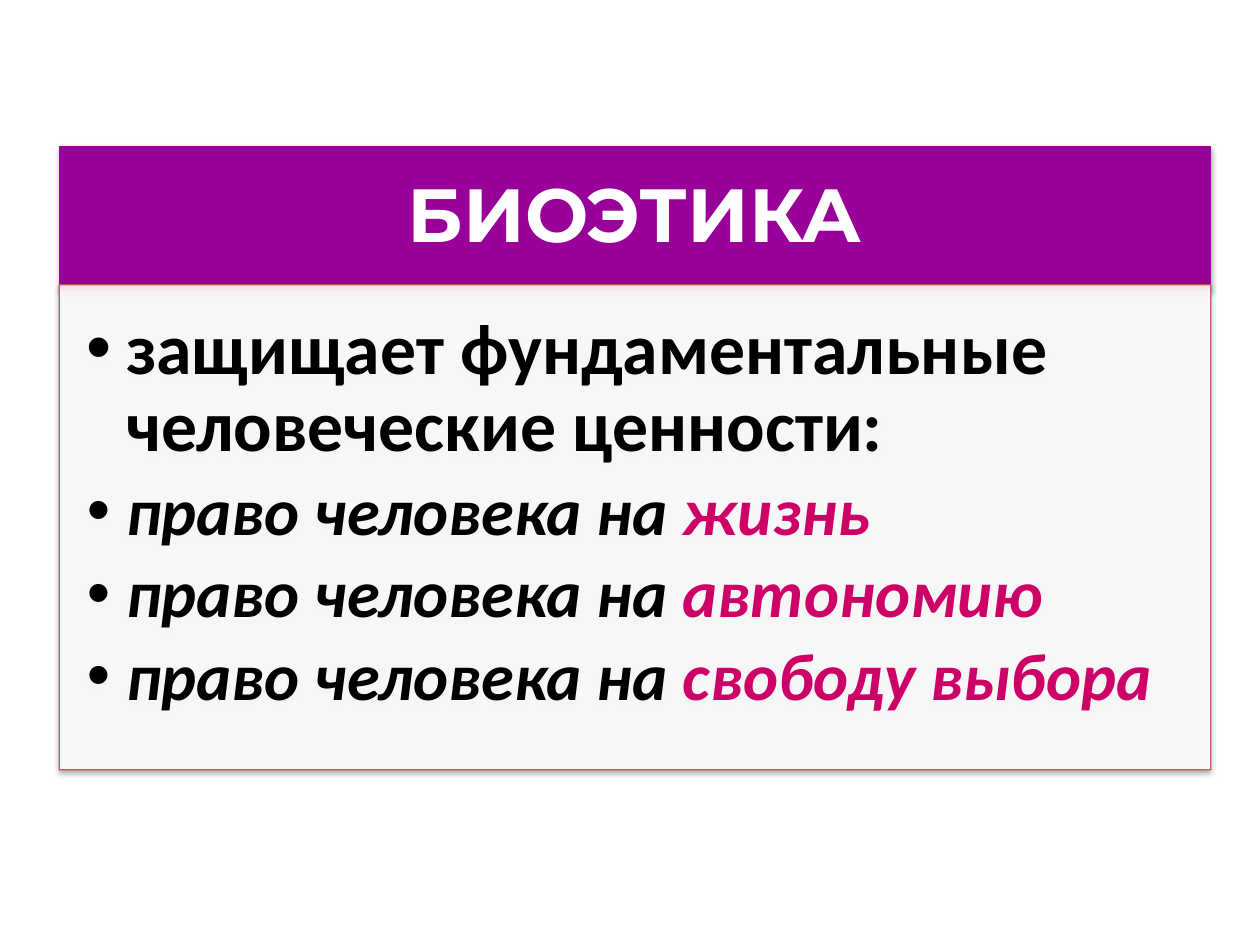
import pptx
import pptx.dml.color
import pptx.enum.text
import pptx.oxml
import pptx.oxml.ns
import pptx.util
from pptx.util import Inches

COLORS = {
    "banner": "990099",
    "panel": "FFFFFF",
    "border": "C0504D",
    "banner_text": "FFFFFF",
    "text": "000000",
    "accent": "CC0066",
}
OPACITY = 90
RIGHT_PREFIX = "право человека на "
RIGHTS = ["жизнь", "автономию", "свободу выбора"]


def rgb(name):
    return pptx.dml.color.RGBColor.from_string(COLORS[name])


def apply_format(target, values):
    for name, value in values.items():
        setattr(target, name, value)


def add_shadow(shape):
    """Append a soft downward shadow; call it after fill and line are set."""
    shape._element.spPr.append(pptx.oxml.parse_xml(
        f'<a:effectLst {pptx.oxml.ns.nsdecls("a")}>'
        '<a:outerShdw blurRad="40000" dist="23000" dir="5400000" rotWithShape="0">'
        '<a:srgbClr val="000000"><a:alpha val="35000"/></a:srgbClr>'
        '</a:outerShdw></a:effectLst>'))


def make_translucent(shape):
    """Give every colour of the shape's fill and line the panel opacity."""
    for color in shape._element.spPr.iter(pptx.oxml.ns.qn("a:srgbClr")):
        color.append(pptx.oxml.parse_xml(
            f'<a:alpha {pptx.oxml.ns.nsdecls("a")} val="{OPACITY * 1000}"/>'))


def place(shape, box, fill, margins, anchor):
    apply_format(shape, dict(zip(("left", "top", "width", "height"), box)))
    shape.fill.solid()
    shape.fill.fore_color.rgb = rgb(fill)
    sides = ("margin_left", "margin_top", "margin_right", "margin_bottom")
    apply_format(shape.text_frame, {
        **dict(zip(sides, map(Inches, margins))),
        "word_wrap": True,
        "auto_size": pptx.enum.text.MSO_AUTO_SIZE.NONE,
        "vertical_anchor": anchor,
    })


def add_run(paragraph, text, color, size, font="Calibri", italic=False):
    run = paragraph.add_run()
    run.text = text
    apply_format(run.font, {"name": font, "size": pptx.util.Pt(size),
                            "bold": True, "italic": italic})
    run.font.color.rgb = rgb(color)


def fill_banner(title, box):
    place(title, box, "banner", (0.33, 0.19, 0.33, 0.19),
          pptx.enum.text.MSO_ANCHOR.MIDDLE)
    title.line.fill.background()
    add_shadow(title)
    paragraph = title.text_frame.paragraphs[0]
    apply_format(paragraph, {"alignment": pptx.enum.text.PP_ALIGN.CENTER,
                             "line_spacing": 0.9})
    add_run(paragraph, "БИОЭТИКА", "banner_text", 43, "Montserrat")


def fill_panel(body, box):
    place(body, box, "panel", (0.22, 0.22, 0.3, 0.33),
          pptx.enum.text.MSO_ANCHOR.TOP)
    body.line.color.rgb = rgb("border")
    body.line.width = pptx.util.Pt(0.75)
    make_translucent(body)
    add_shadow(body)

    frame = body.text_frame
    add_run(frame.paragraphs[0], "защищает фундаментальные человеческие ценности:",
            "text", 41)
    for right in RIGHTS:
        paragraph = frame.add_paragraph()
        add_run(paragraph, RIGHT_PREFIX, "text", 38, italic=True)
        add_run(paragraph, right, "accent", 38, italic=True)
    for paragraph in frame.paragraphs:
        apply_format(paragraph, {"line_spacing": 0.9,
                                 "space_before": pptx.util.Pt(0),
                                 "space_after": pptx.util.Pt(6)})
        properties = paragraph._p.get_or_add_pPr()
        properties.set("marL", str(Inches(0.31)))
        properties.set("indent", str(-Inches(0.31)))


def main():
    presentation = pptx.Presentation()
    presentation.slide_width = Inches(10)
    presentation.slide_height = Inches(7.5)
    slide = presentation.slides.add_slide(presentation.slide_layouts[1])
    left, width = Inches(0.47), Inches(9.14)
    fill_banner(slide.shapes.title, (left, Inches(1.16), width, Inches(1.14)))
    fill_panel(slide.placeholders[1], (left, Inches(2.26), width, Inches(3.85)))
    presentation.save("out.pptx")


if __name__ == "__main__":
    main()
